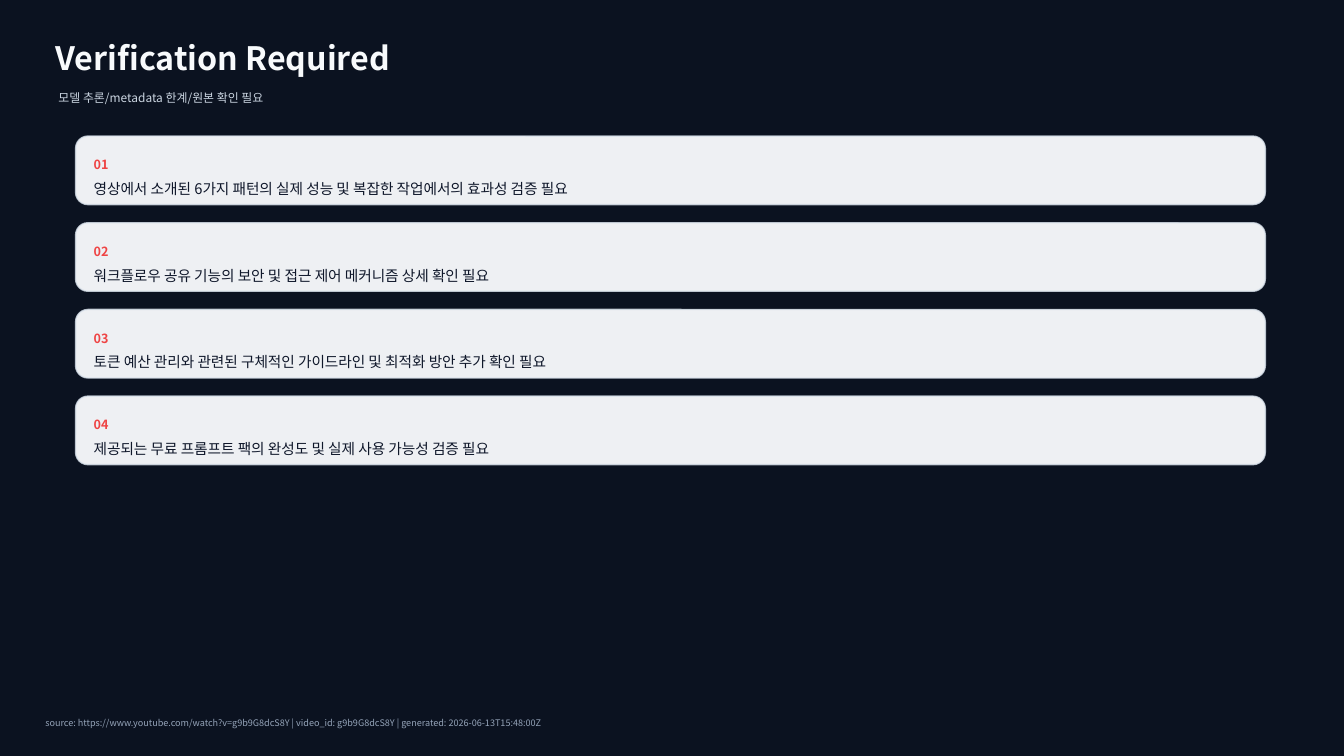
from dataclasses import dataclass

from lxml.etree import SubElement
from pptx import Presentation
from pptx.dml.color import RGBColor
from pptx.enum.shapes import MSO_SHAPE
from pptx.enum.text import MSO_ANCHOR
from pptx.oxml.ns import qn
from pptx.util import Inches, Pt


@dataclass(frozen=True)
class Theme:
    font: str = "Noto Sans CJK KR"
    back: str = "0B1220"
    title: str = "F8FAFC"
    sub: str = "CBD5E1"
    card: str = "F8FAFC"
    edge: str = "D7E0EA"
    accent: str = "EF4444"
    body: str = "0F172A"
    muted: str = "94A3B8"
    title_size: float = 23
    sub_size: float = 8.5
    label_size: float = 9
    body_size: float = 10.5
    foot_size: float = 6.5


class Board:
    def __init__(self, slide, theme):
        self.slide = slide
        self.theme = theme
        fill = slide.background.fill
        fill.solid()
        fill.fore_color.rgb = RGBColor.from_string(theme.back)

    def text(self, words, box, size, color, bold=False):
        frame = self.slide.shapes.add_textbox(*map(Inches, box)).text_frame
        frame.word_wrap = True
        frame.vertical_anchor = MSO_ANCHOR.MIDDLE
        frame.margin_left = frame.margin_right = 0
        frame.margin_top = frame.margin_bottom = 0
        para = frame.paragraphs[0]
        para.text = words
        font = para.font
        font.size = Pt(size)
        font.bold = bold
        font.color.rgb = RGBColor.from_string(color)
        font.name = self.theme.font
        # Korean text takes its typeface from the East Asian slot
        props = para._p.pPr.find(qn("a:defRPr"))
        SubElement(props, qn("a:ea"), typeface=self.theme.font)

    def paint(self, fill, color, alpha):
        """Make a fill solid, with its opacity in percent."""
        fill.solid()
        fill.fore_color.rgb = RGBColor.from_string(color)
        tone = fill._xPr.find(qn("a:solidFill"))[0]
        SubElement(tone, qn("a:alpha"), val=str(alpha * 1000))

    def panel(self, box):
        shape = self.slide.shapes.add_shape(
            MSO_SHAPE.ROUNDED_RECTANGLE, *map(Inches, box))
        shape.adjustments[0] = 0.18
        shape.shadow.inherit = False
        self.paint(shape.fill, self.theme.card, 96)
        self.paint(shape.line.fill, self.theme.edge, 80)
        shape.line.width = Pt(1)

    def card(self, index, words, top):
        look = self.theme
        self.panel((0.75, top, 11.8, 0.68))
        self.text(f"{index:02}", (0.93, top + 0.16, 11.44, 0.25),
                  look.label_size, look.accent, True)
        self.text(words, (0.93, top + 0.5, 11.44, 0.04),
                  look.body_size, look.body)


CHECKS = [
    "영상에서 소개된 6가지 패턴의 실제 성능 및 복잡한 작업에서의 효과성 검증 필요",
    "워크플로우 공유 기능의 보안 및 접근 제어 메커니즘 상세 확인 필요",
    "토큰 예산 관리와 관련된 구체적인 가이드라인 및 최적화 방안 추가 확인 필요",
    "제공되는 무료 프롬프트 팩의 완성도 및 실제 사용 가능성 검증 필요",
]
SOURCE = ("source: https://www.youtube.com/watch?v=g9b9G8dcS8Y"
          " | video_id: g9b9G8dcS8Y | generated: 2026-06-13T15:48:00Z")
FIRST_TOP = 1.35
STEP = 0.86


def main():
    deck = Presentation()
    deck.slide_width = Inches(13.33)
    deck.slide_height = Inches(7.5)
    look = Theme()
    board = Board(deck.slides.add_slide(deck.slide_layouts[6]), look)

    board.text("Verification Required", (0.55, 0.35, 12, 0.45),
               look.title_size, look.title, True)
    board.text("모델 추론/metadata 한계/원본 확인 필요",
               (0.58, 0.83, 11.5, 0.28), look.sub_size, look.sub)
    for index, words in enumerate(CHECKS):
        board.card(index + 1, words, FIRST_TOP + index * STEP)
    board.text(SOURCE, (0.45, 7.05, 12.4, 0.25),
               look.foot_size, look.muted)

    deck.save("out.pptx")


if __name__ == "__main__":
    main()
